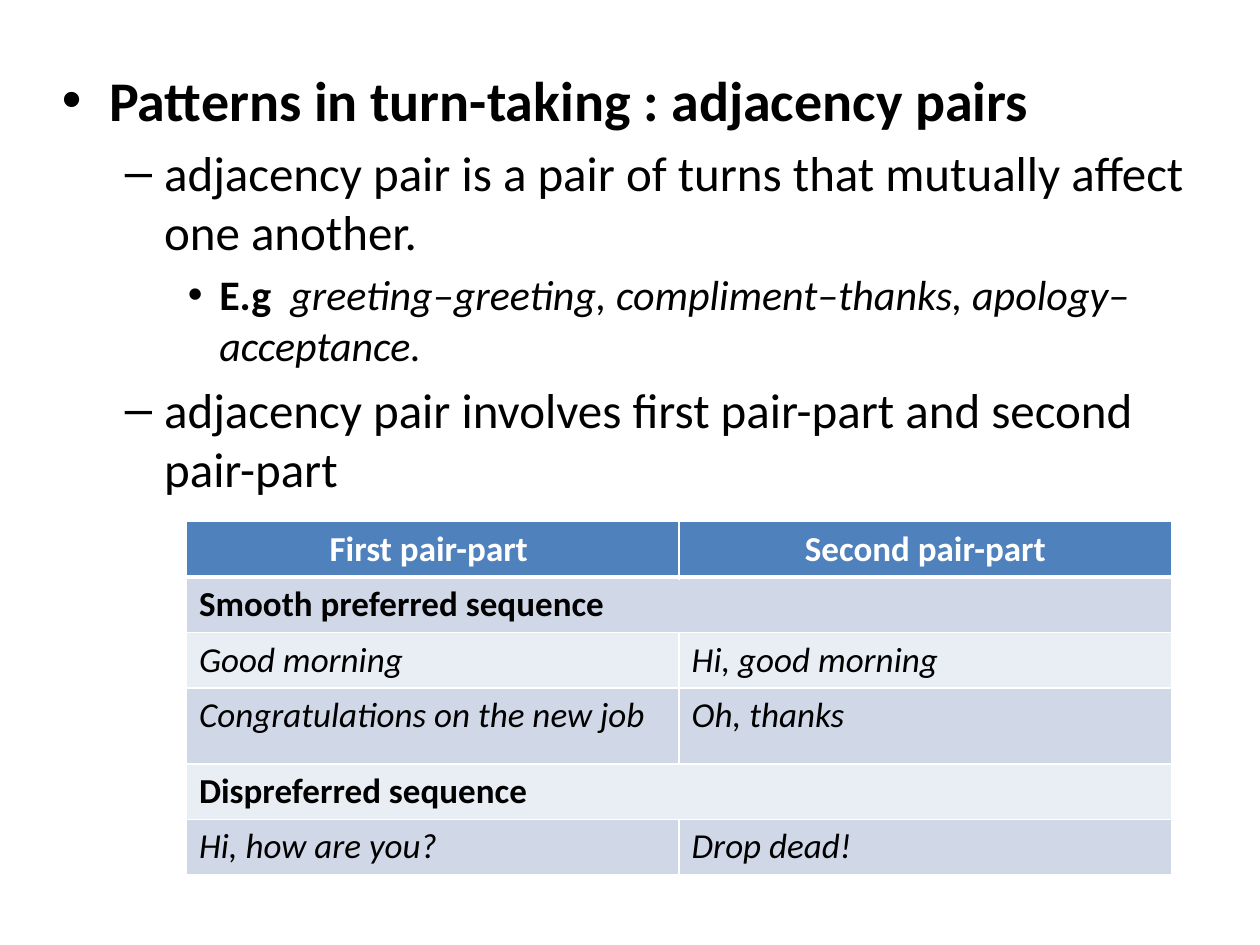
from lxml.etree import SubElement
from pptx import Presentation
from pptx.dml.color import RGBColor
from pptx.enum.text import MSO_AUTO_SIZE, PP_ALIGN
from pptx.oxml.ns import qn
from pptx.util import Inches, Pt

BLACK = RGBColor(0x00, 0x00, 0x00)
WHITE = RGBColor(0xFF, 0xFF, 0xFF)
HEADER_BLUE = RGBColor(0x4F, 0x81, 0xBD)
BAND_DARK = RGBColor(0xD0, 0xD8, 0xE8)
BAND_LIGHT = RGBColor(0xE9, 0xED, 0xF4)

FONT = "Calibri"
LEVEL_SIZES = [32, 28, 24]

OUTLINE = [
    (0, [("Patterns in turn-taking : adjacency pairs", True, False)]),
    (1, [("adjacency pair is a pair of turns that mutually aﬀect one another.", False, False)]),
    (2, [("E.g  ", True, False),
         ("greeting–greeting, compliment–thanks, apology–acceptance.", False, True)]),
    (1, [("adjacency pair involves first pair-part and second pair-part", False, False)]),
]

PAIR_ROWS = [
    ("First pair-part ", "Second pair-part"),
    ("Smooth preferred sequence",),
    ("Good morning", "Hi, good morning"),
    ("Congratulations on the new job", "Oh, thanks"),
    ("Dispreferred sequence",),
    ("Hi, how are you?", "Drop dead!"),
]
ROW_HEIGHTS = [0.44, 0.44, 0.44, 0.6, 0.44, 0.44]


def style_font(font, size, color, bold, italic):
    font.name = FONT
    font.size = Pt(size)
    font.color.rgb = color
    font.bold = bold
    font.italic = italic


def fill_outline(box):
    box.left, box.top = Inches(0.39), Inches(0.47)
    box.width, box.height = Inches(9.3), Inches(6.64)
    frame = box.text_frame
    frame.word_wrap = True
    frame.auto_size = MSO_AUTO_SIZE.NONE
    for index, (level, spans) in enumerate(OUTLINE):
        para = frame.add_paragraph() if index else frame.paragraphs[0]
        para.level = level
        for text, bold, italic in spans:
            span = para.add_run()
            span.text = text
            style_font(span.font, LEVEL_SIZES[level], BLACK, bold, italic)


def set_borders(cell, bottom_width):
    properties = cell._tc.get_or_add_tcPr()
    widths = {"a:lnL": 1, "a:lnR": 1, "a:lnT": 1, "a:lnB": bottom_width}
    for tag, width in widths.items():
        line = SubElement(properties, qn(tag), w=str(Pt(width)))
        fill = SubElement(line, qn("a:solidFill"))
        SubElement(fill, qn("a:srgbClr"), val=str(WHITE))


def style_cell(cell, is_header, is_section, color):
    set_borders(cell, 3 if is_header else 1)
    cell.fill.solid()
    cell.fill.fore_color.rgb = color
    para = cell.text_frame.paragraphs[0]
    para.alignment = PP_ALIGN.CENTER if is_header else PP_ALIGN.LEFT
    strong = is_header or is_section
    style_font(para.font, 20, WHITE if is_header else BLACK, strong, not strong)


def add_pair_table(page):
    frame = page.shapes.add_table(
        len(PAIR_ROWS), 2, Inches(1.48), Inches(4.14),
        Inches(7.82), Inches(sum(ROW_HEIGHTS)))
    table = frame.table
    for index, texts in enumerate(PAIR_ROWS):
        table.rows[index].height = Inches(ROW_HEIGHTS[index])
        is_header, is_section = index == 0, len(texts) == 1
        if is_header:
            color = HEADER_BLUE
        else:
            color = BAND_DARK if index % 2 else BAND_LIGHT
        if is_section:
            table.cell(index, 0).merge(table.cell(index, 1))
        for column, text in enumerate(texts):
            table.cell(index, column).text = text
        for column in range(2):
            style_cell(table.cell(index, column), is_header, is_section, color)


def main():
    deck = Presentation()
    deck.slide_width, deck.slide_height = Inches(10), Inches(7.5)
    page = deck.slides.add_slide(deck.slide_layouts[1])
    title = page.shapes.title.element
    title.getparent().remove(title)
    fill_outline(page.placeholders[1])
    add_pair_table(page)
    deck.save("out.pptx")


if __name__ == "__main__":
    main()
